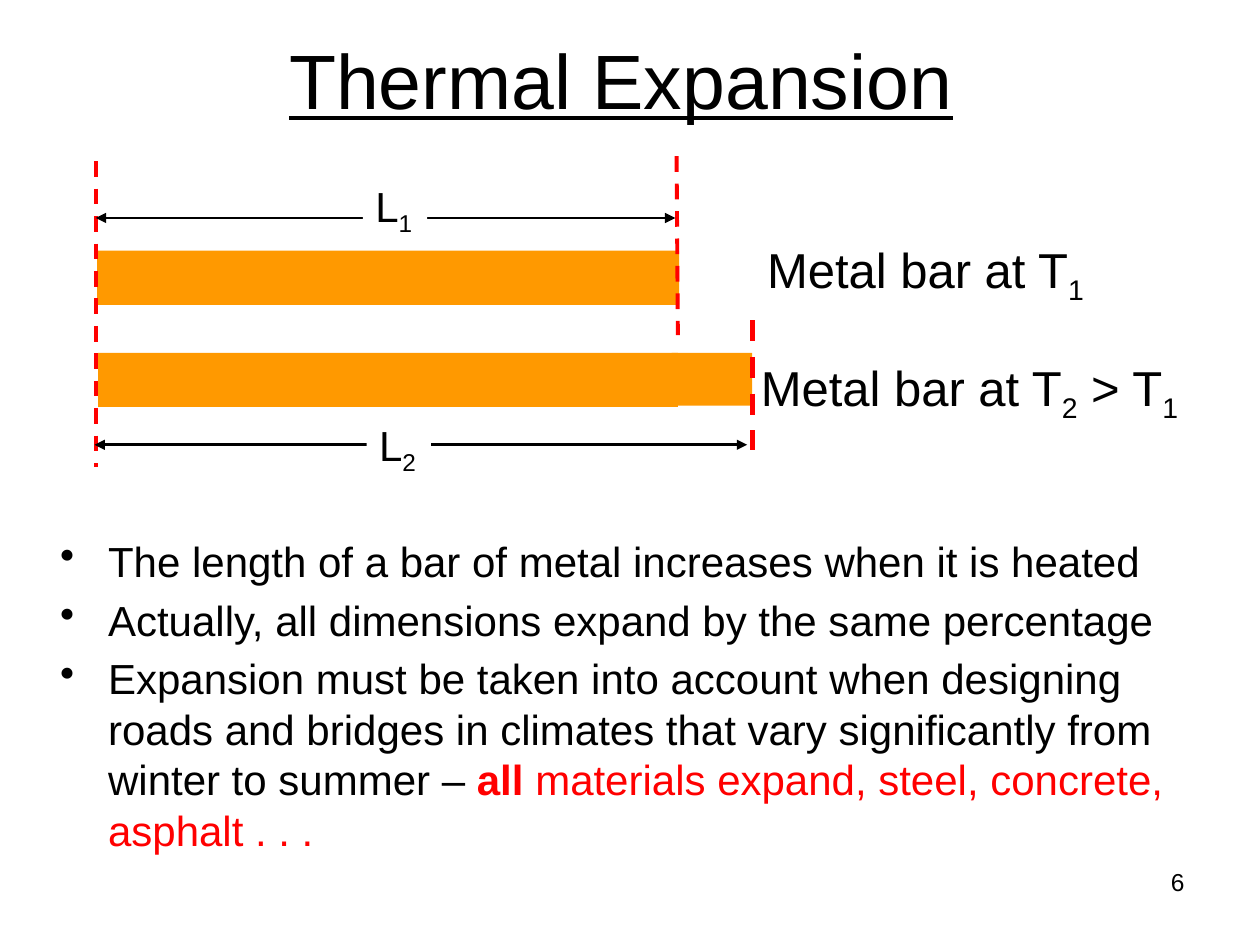
"""Build the thermal expansion slide."""
import pptx
import pptx.dml.color
import pptx.enum.dml
import pptx.enum.shapes
import pptx.enum.text
import pptx.oxml.ns
import pptx.util
from lxml import etree
from pptx.util import Inches

BLACK = pptx.dml.color.RGBColor(0x00, 0x00, 0x00)
RED = pptx.dml.color.RGBColor(0xFF, 0x00, 0x00)
ORANGE = pptx.dml.color.RGBColor(0xFF, 0x99, 0x00)
WHITE = pptx.dml.color.RGBColor(0xFF, 0xFF, 0xFF)
ALIGN = pptx.enum.text.PP_ALIGN
qn = pptx.oxml.ns.qn


class Deck:
    """Hold the text style and the current slide."""

    font = "Arial"

    def __init__(self, s):
        self.s = s

    def style(self, p, size, align=ALIGN.LEFT):
        p.alignment = align
        p.font.name = self.font
        p.font.size = pptx.util.Pt(size)
        p.font.color.rgb = BLACK

    def title(self, text, x, y, w, h):
        sp = self.s.shapes.title
        sp.left, sp.top, sp.width, sp.height = map(Inches, (x, y, w, h))
        tf = sp.text_frame
        tf.text = text
        tf.vertical_anchor = pptx.enum.text.MSO_ANCHOR.MIDDLE
        self.style(tf.paragraphs[0], 44, ALIGN.CENTER)
        tf.paragraphs[0].font.underline = True

    def box(self, x, y, w, h, wrap=True):
        sp = self.s.shapes.add_textbox(*map(Inches, (x, y, w, h)))
        sp.text_frame.word_wrap = wrap
        return sp

    def text(self, text, x, y, w, h, size, align):
        p = self.box(x, y, w, h).text_frame.paragraphs[0]
        p.text = text
        self.style(p, size, align)

    def label(self, parts, x, y, w, h, size, fill=None):
        """Write parts that alternate between normal text and subscript."""
        sp = self.box(x, y, w, h, wrap=False)
        sp.text_frame.auto_size = pptx.enum.text.MSO_AUTO_SIZE.SHAPE_TO_FIT_TEXT
        if fill is not None:
            sp.fill.solid()
            sp.fill.fore_color.rgb = fill
        p = sp.text_frame.paragraphs[0]
        self.style(p, size)
        for i, part in enumerate(parts):
            r = p.add_run()
            r.text = part
            if i % 2:
                r._r.get_or_add_rPr().set("baseline", "-25000")

    def bullets(self, items, x, y, w, h, size):
        tf = self.box(x, y, w, h).text_frame
        for i, runs in enumerate(items):
            p = tf.add_paragraph() if i else tf.paragraphs[0]
            self.style(p, size)
            p.space_before = pptx.util.Pt(0.2 * size)
            pPr = p._p.get_or_add_pPr()
            pPr.set("marL", str(Inches(0.38)))
            pPr.set("indent", str(Inches(-0.38)))
            bullet = etree.Element(qn("a:buChar"), char="•")
            pPr.insert_element_before(bullet, "a:tabLst", "a:defRPr", "a:extLst")
            for text, color, bold in runs:
                r = p.add_run()
                r.text = text
                r.font.color.rgb = color
                r.font.bold = bold

    def bar(self, x, y, w, h):
        kind = pptx.enum.shapes.MSO_SHAPE.RECTANGLE
        sp = self.s.shapes.add_shape(kind, *map(Inches, (x, y, w, h)))
        sp.shadow.inherit = False
        sp.fill.solid()
        sp.fill.fore_color.rgb = ORANGE
        sp.line.fill.background()

    def line(self, x1, y1, x2, y2, color, width):
        kind = pptx.enum.shapes.MSO_CONNECTOR.STRAIGHT
        sp = self.s.shapes.add_connector(kind, *map(Inches, (x1, y1, x2, y2)))
        sp.line.color.rgb = color
        sp.line.width = pptx.util.Pt(width)
        etree.SubElement(sp._element.spPr, qn("a:effectLst"))
        return sp

    def guide(self, x1, y1, x2, y2, width=2.25):
        sp = self.line(x1, y1, x2, y2, RED, width)
        sp.line.dash_style = pptx.enum.dml.MSO_LINE.DASH

    def dimension(self, x1, x2, y):
        ln = self.line(x1, y, x2, y, BLACK, 1.5).line._get_or_add_ln()
        for end in ("a:headEnd", "a:tailEnd"):
            etree.SubElement(ln, qn(end), type="triangle")


def main():
    prs = pptx.Presentation()
    prs.slide_width, prs.slide_height = Inches(10), Inches(7.5)
    d = Deck(prs.slides.add_slide(prs.slide_layouts[5]))

    d.title("Thermal Expansion", 0.43, 0, 9, 1.25)
    d.bullets([
        [("The length of a bar of metal increases when it is heated", BLACK, False)],
        [("Actually, all dimensions expand by the same percentage", BLACK, False)],
        [("Expansion must be taken into account when designing roads and bridges "
          "in climates that vary significantly from winter to summer – ", BLACK, False),
         ("all ", RED, True),
         ("materials expand, steel, concrete, asphalt . . .", RED, False)],
    ], 0.38, 4.2, 9, 3.01, 24)

    d.bar(0.77, 1.99, 4.62, 0.43)
    d.bar(0.78, 2.8, 4.6, 0.43)
    d.guide(0.76, 1.28, 0.76, 3.71)
    d.label(["Metal bar at T", "1"], 5.99, 1.85, 2.75, 0.57, 28)
    d.label(["Metal bar at T", "2", " > T", "1"], 5.94, 2.79, 3.58, 0.57, 28)
    d.bar(5.33, 2.8, 0.64, 0.42)
    d.guide(5.37, 1.24, 5.38, 2.66)
    d.guide(5.97, 2.54, 5.97, 3.57, 3)

    d.dimension(0.76, 5.36, 1.73)
    d.dimension(0.75, 5.93, 3.53)
    d.label(["L", "2"], 2.91, 3.28, 0.51, 0.5, 24, WHITE)
    d.label(["L", "1"], 2.88, 1.38, 0.51, 0.5, 24, WHITE)
    d.text("6", 7.17, 6.83, 2.33, 0.52, 14, ALIGN.RIGHT)
    prs.save("out.pptx")


if __name__ == "__main__":
    main()
